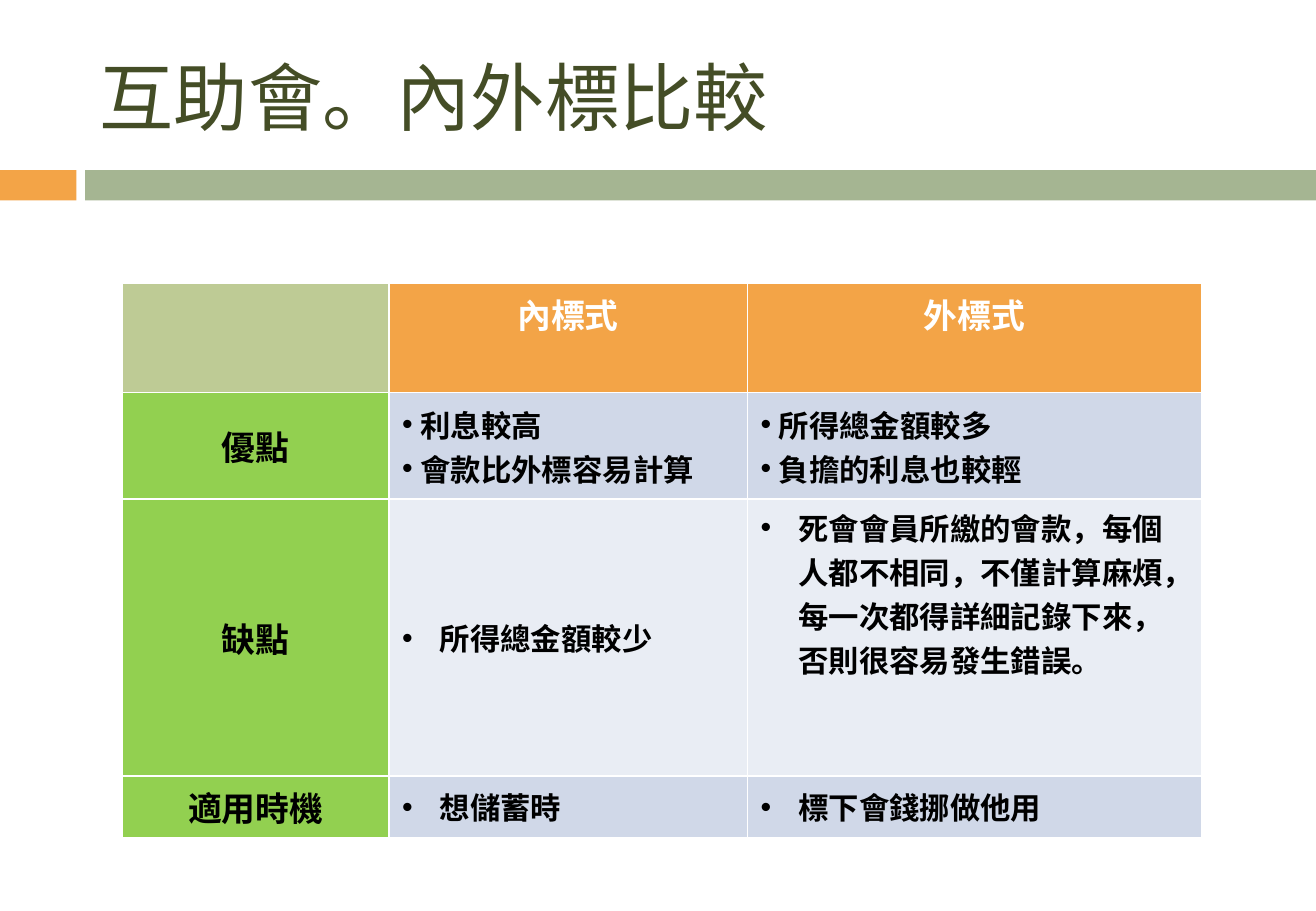
from dataclasses import dataclass

from lxml.etree import SubElement
from pptx import Presentation
from pptx.dml.color import RGBColor
from pptx.enum.shapes import MSO_SHAPE as Form
from pptx.enum.text import MSO_ANCHOR as Anchor, PP_ALIGN as Align
from pptx.oxml import parse_xml
from pptx.oxml.ns import nsdecls, qn
from pptx.util import Inches, Pt

CJK = "Noto Sans CJK JP"


@dataclass
class Band:
    left: float
    width: float
    color: str


@dataclass
class Entry:
    lines: list[str]
    fill: str
    size: int = 20
    color: str = "000000"
    indent: float = 0
    anchor: Anchor = Anchor.MIDDLE


def paint(target, color: str) -> None:
    target.solid()
    target.fore_color.rgb = RGBColor.from_string(color)


def style(para, size: int, color: str, face: str, bold: bool) -> None:
    font = para.font
    font.size, font.name, font.bold = Pt(size), face, bold
    paint(font.fill, color)
    east = SubElement(para._p.pPr.find(qn("a:defRPr")), qn("a:ea"))
    east.set("typeface", CJK)


def bullet(para, indent: float) -> None:
    props = para._p.get_or_add_pPr()
    props.set("marL", str(Inches(indent)))
    props.set("indent", str(-Inches(indent)))
    props.insert(0, parse_xml(f'<a:buChar {nsdecls("a")} char="•"/>'))
    props.insert(0, parse_xml(f'<a:buFont {nsdecls("a")} typeface="Arial"/>'))


def draw_band(slide, band: Band) -> None:
    shape = slide.shapes.add_shape(
        Form.RECTANGLE, Inches(band.left), Inches(1.4), Inches(band.width), Inches(0.25))
    shape.shadow.inherit = False
    paint(shape.fill, band.color)
    shape.line.fill.background()


def draw_title(slide, text: str) -> None:
    title = slide.shapes.title
    title.left, title.top = Inches(0.72), Inches(0.25)
    title.width, title.height = Inches(9.66), Inches(1.08)
    frame = title.text_frame
    frame.text = text
    frame.vertical_anchor = Anchor.MIDDLE
    para = frame.paragraphs[0]
    para.alignment = Align.LEFT
    style(para, 44, "444D26", CJK, False)


def fill_cell(cell, entry: Entry) -> None:
    paint(cell.fill, entry.fill)
    cell.vertical_anchor = entry.anchor
    cell.margin_left = cell.margin_right = Inches(0.11)
    cell.margin_top = cell.margin_bottom = Inches(0.05)
    cell.text = "\n".join(entry.lines)
    for para in cell.text_frame.paragraphs:
        para.alignment = Align.LEFT if entry.indent else Align.CENTER
        style(para, entry.size, entry.color, "Arial", True)
        if entry.indent:
            bullet(para, entry.indent)


def head(text: str, fill: str = "F3A447") -> Entry:
    return Entry([text], fill, color="FFFFFF", anchor=Anchor.TOP)


def label(text: str) -> Entry:
    return Entry([text], "92D050")


def points(lines: list[str], fill: str = "D0D8E8", indent: float = 0.31,
           anchor: Anchor = Anchor.MIDDLE) -> Entry:
    return Entry(lines, fill, 18, indent=indent, anchor=anchor)


def draw_table(slide, rows: list[list[Entry]], widths: list[float],
               heights: list[float]) -> None:
    table = slide.shapes.add_table(
        len(rows), len(widths), Inches(1.01), Inches(2.33),
        Inches(sum(widths)), Inches(sum(heights))).table
    for column, width in zip(table.columns, widths):
        column.width = Inches(width)
    for row, height, entries in zip(table.rows, heights, rows):
        row.height = Inches(height)
        for cell, entry in zip(row.cells, entries):
            fill_cell(cell, entry)


BANDS = [Band(0, 0.63, "F3A447"), Band(0.7, 10.13, "A5B592")]
PALE = "E9EDF4"
ROWS = [
    [head("", "BECB95"), head("內標式"), head("外標式")],
    [label("優點"),
     points(["利息較高", "會款比外標容易計算"], indent=0.15),
     points(["所得總金額較多", "負擔的利息也較輕"], indent=0.15)],
    [label("缺點"),
     points(["所得總金額較少"], PALE),
     points(["死會會員所繳的會款，每個人都不相同，不僅計算麻煩，"
             "每一次都得詳細記錄下來，否則很容易發生錯誤。"], PALE, anchor=Anchor.TOP)],
    [label("適用時機"), points(["想儲蓄時"]), points(["標下會錢挪做他用"])],
]


def main() -> None:
    deck = Presentation()
    deck.slide_width, deck.slide_height = Inches(10.83), Inches(7.5)
    slide = deck.slides.add_slide(deck.slide_layouts[5])
    for band in BANDS:
        draw_band(slide, band)
    draw_title(slide, "互助會。內外標比較")
    draw_table(slide, ROWS, [2.19, 2.95, 3.74], [0.9, 0.88, 2.28, 0.49])
    deck.save("out.pptx")


if __name__ == "__main__":
    main()
